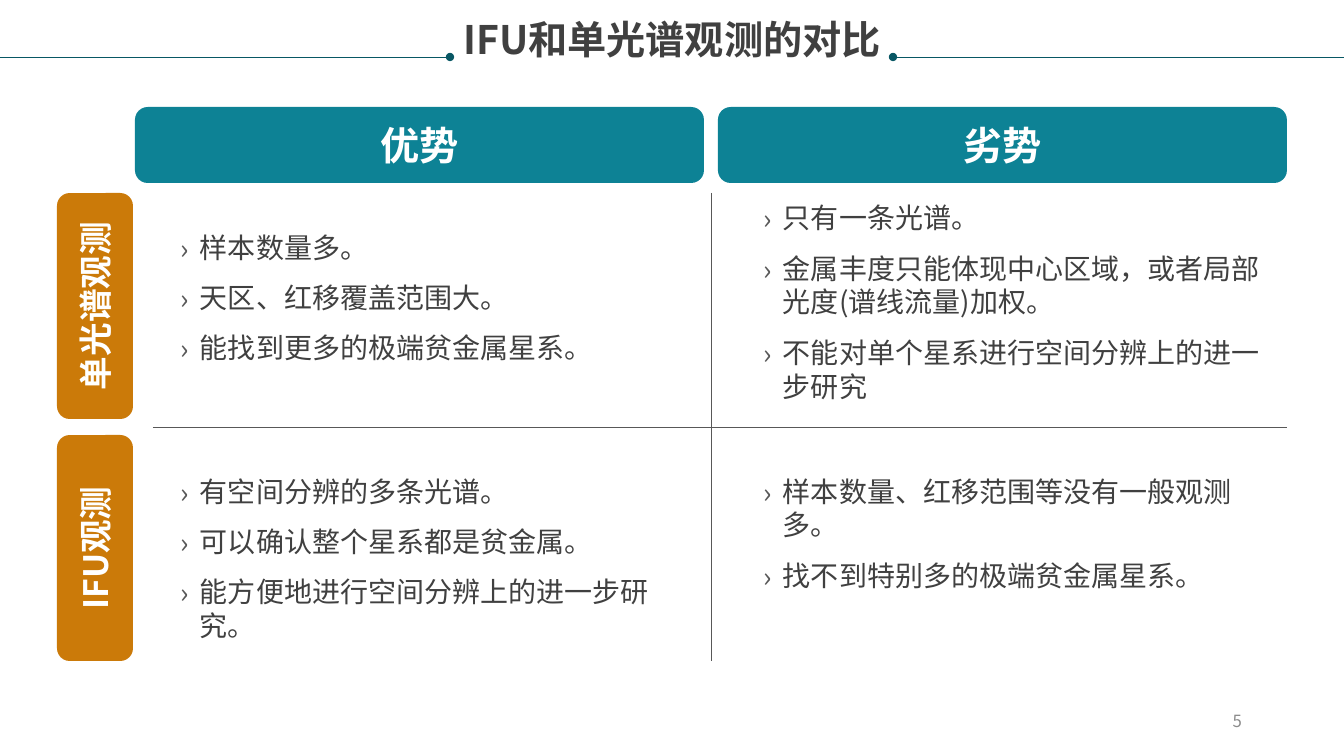
from lxml import etree
from pptx import Presentation
from pptx.dml.color import RGBColor
from pptx.enum.shapes import MSO_CONNECTOR, MSO_SHAPE
from pptx.enum.text import MSO_ANCHOR, PP_ALIGN
from pptx.oxml.ns import qn
from pptx.util import Emu, Pt

LEFT, CENTER, RIGHT = PP_ALIGN.LEFT, PP_ALIGN.CENTER, PP_ALIGN.RIGHT
TOP, MIDDLE = MSO_ANCHOR.TOP, MSO_ANCHOR.MIDDLE
ROUNDED, STRAIGHT = MSO_SHAPE.ROUNDED_RECTANGLE, MSO_CONNECTOR.STRAIGHT

FONT = "Noto Sans CJK SC"
COLORS = {
    "column": "0D8295",
    "row": "CB7A09",
    "title_rule": "085764",
    "grid": "585858",
    "text": "404040",
    "label": "FFFFFF",
    "number": "8C8C8C",
}
EMU_PER_PX = 914400 / 100.8
BULLET_INDENT = 19

COLUMN_LEFTS = {"优势": 135, "劣势": 718}
ROW_TOPS = {"单光谱观测": 193, "IFU观测": 435}
POINTS = [
    (181, 230, 477, 141, ["样本数量多。", "天区、红移覆盖范围大。", "能找到更多的极端贫金属星系。"]),
    (764, 201, 506, 212, ["只有一条光谱。",
                          "金属丰度只能体现中心区域，或者局部光度(谱线流量)加权。",
                          "不能对单个星系进行空间分辨上的进一步研究"]),
    (181, 474, 477, 176, ["有空间分辨的多条光谱。", "可以确认整个星系都是贫金属。",
                          "能方便地进行空间分辨上的进一步研究。"]),
    (764, 474, 477, 124, ["样本数量、红移范围等没有一般观测多。",
                          "找不到特别多的极端贫金属星系。"]),
]


def px(length):
    return Emu(round(length * EMU_PER_PX))


def rgb(name):
    return RGBColor.from_string(COLORS[name])


def write(para, text, size=20, color="text", bold=False, align=LEFT):
    para.alignment = align
    span = para.add_run()
    span.text = text
    font = span.font
    font.size, font.bold, font.name = Pt(size), bold, FONT
    font.color.rgb = rgb(color)
    etree.SubElement(font._element, qn("a:ea"), typeface=FONT)


def add_bullet(para):
    props = para._p.get_or_add_pPr()
    props.set("marL", str(px(BULLET_INDENT)))
    props.set("indent", str(-px(BULLET_INDENT)))
    color = etree.SubElement(props, qn("a:buClr"))
    etree.SubElement(color, qn("a:srgbClr"), val=COLORS["grid"])
    etree.SubElement(props, qn("a:buFont"), typeface=FONT)
    etree.SubElement(props, qn("a:buChar"), char="›")


class SlideBuilder:
    """Draws styled elements on one slide, with lengths in px."""

    def __init__(self, slide):
        self.shapes = slide.shapes

    def line(self, x1, y1, x2, y2, color="grid", dot=None):
        """Draw a rule; dot is "headEnd" (start) or "tailEnd" (finish)."""
        rule = self.shapes.add_connector(STRAIGHT, px(x1), px(y1), px(x2), px(y2))
        rule.line.color.rgb = rgb(color)
        rule.line.width = Pt(0.5)
        if dot:
            etree.SubElement(rule.line._get_or_add_ln(), qn("a:" + dot), type="oval")
        etree.SubElement(rule._element.spPr, qn("a:effectLst"))

    def label(self, left, top, width, height, text, fill, size, rotation=0):
        box = self.shapes.add_shape(ROUNDED, px(left), px(top), px(width), px(height))
        box.shadow.inherit = False
        box.fill.solid()
        box.fill.fore_color.rgb = rgb(fill)
        box.line.fill.background()
        box.rotation = rotation
        box.text_frame.vertical_anchor = MIDDLE
        write(box.text_frame.paragraphs[0], text, size=size, color="label",
              bold=True, align=CENTER)

    def text_box(self, left, top, width, height, anchor=TOP):
        """Add an empty wrapping box without margins and return its frame."""
        box = self.shapes.add_textbox(px(left), px(top), px(width), px(height))
        frame = box.text_frame
        frame.word_wrap = True
        frame.vertical_anchor = anchor
        frame.margin_left = frame.margin_right = 0
        frame.margin_top = frame.margin_bottom = 0
        return frame

    def text(self, left, top, width, height, text, anchor=TOP, spacing=None, **style):
        para = self.text_box(left, top, width, height, anchor).paragraphs[0]
        para.line_spacing = spacing
        write(para, text, **style)

    def bullets(self, left, top, width, height, points):
        frame = self.text_box(left, top, width, height)
        for index, point in enumerate(points):
            para = frame.add_paragraph() if index else frame.paragraphs[0]
            para.space_before = Pt(12)
            add_bullet(para)
            write(para, point)


def main():
    deck = Presentation()
    deck.slide_width, deck.slide_height = px(1344), px(756)
    page = SlideBuilder(deck.slides.add_slide(deck.slide_layouts[6]))

    page.line(893, 57, 1344, 57, color="title_rule", dot="headEnd")
    page.text(25, 21, 1294, 86, "IFU和单光谱观测的对比", spacing=0.9,
              size=28, bold=True, align=CENTER)
    page.line(0, 57, 450, 57, color="title_rule", dot="tailEnd")

    for name, left in COLUMN_LEFTS.items():
        page.label(left, 107, 569, 76, name, "column", 28)
    length, thickness = 226, 76
    for name, top in ROW_TOPS.items():
        shift = (length - thickness) // 2
        page.label(57 - shift, top + shift, length, thickness, name, "row", 24, rotation=270)

    page.line(153, 427, 1287, 427)
    page.line(711, 193, 711, 661)
    for left, top, width, height, points in POINTS:
        page.bullets(left, top, width, height, points)
    page.text(950, 701, 292, 40, "5", anchor=MIDDLE, size=12, color="number", align=RIGHT)

    deck.save("out.pptx")


if __name__ == "__main__":
    main()
